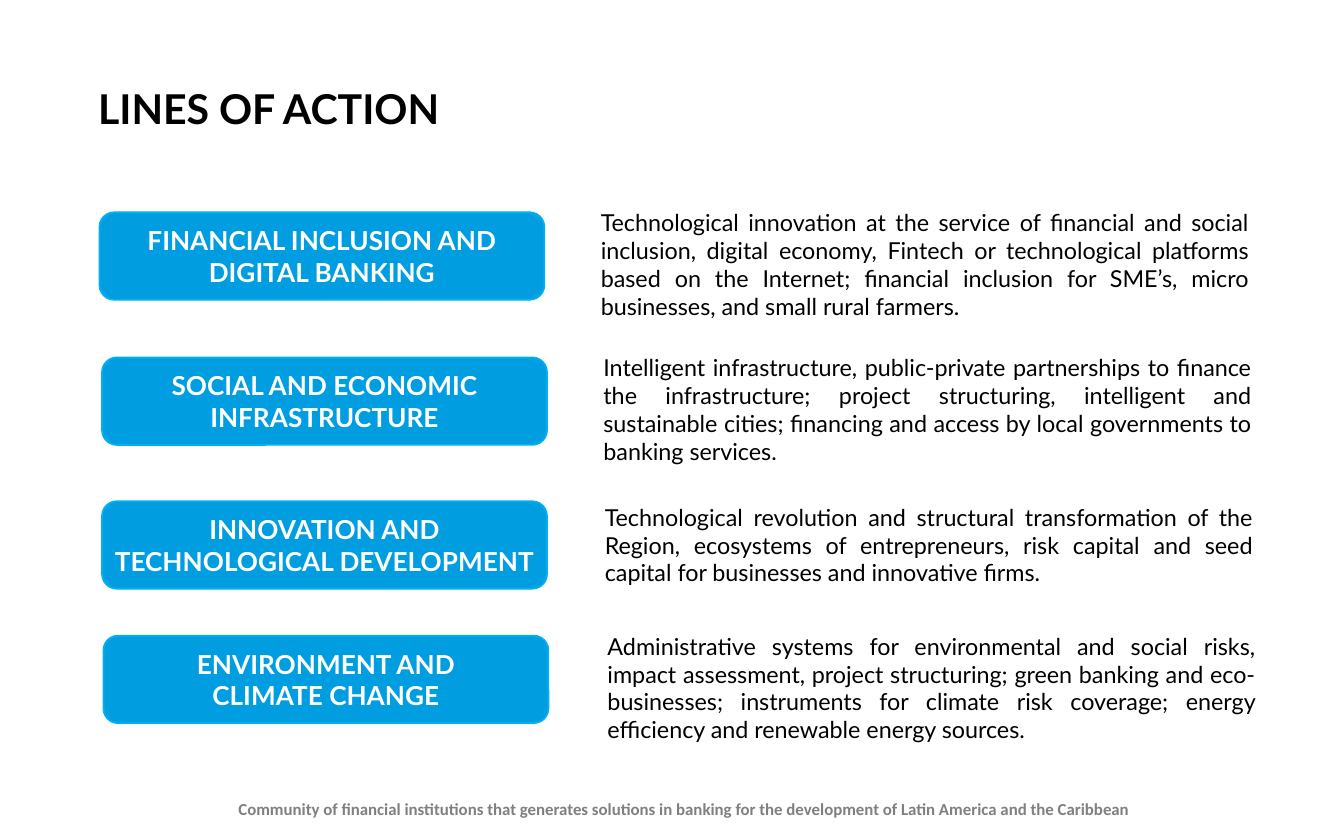
"""Build the "Lines of action" slide: four themed labels with their descriptions."""
from dataclasses import dataclass
from typing import Any, NamedTuple

from pptx import Presentation
from pptx.dml.color import RGBColor
from pptx.enum.shapes import MSO_SHAPE
from pptx.enum.text import MSO_ANCHOR, PP_ALIGN
from pptx.util import Inches, Pt

COLS, ROWS = 200, 125


@dataclass(frozen=True)
class Theme:
    """Colours, fonts and type sizes."""
    blue: RGBColor = RGBColor(0x00, 0x9D, 0xE0)
    edge: RGBColor = RGBColor(0x00, 0xB0, 0xF0)
    white: RGBColor = RGBColor(0xFF, 0xFF, 0xFF)
    black: RGBColor = RGBColor(0x00, 0x00, 0x00)
    grey: RGBColor = RGBColor(0x80, 0x80, 0x80)
    font: str = "Lato"
    footer_font: str = "Calibri"
    title: float = 22
    label: float = 14
    body: float = 12.5
    footer: float = 9


class Box(NamedTuple):
    """Place and size in grid columns and rows."""
    x: float
    y: float
    w: float
    h: float


class Line(NamedTuple):
    """One line of action: label, description and their places."""
    label: str
    label_box: Box
    text: str
    text_box: Box


T = Theme()
LABEL_SIZE = (66.2, 13)
TEXT_SIZE = (99.6, 18.4)
TITLE_BOX = Box(13, 12.4, 59.2, 8.8)
FOOTER_BOX = Box(27.6, 118, 148.2, 4.6)
FOOTER = ("Community of financial institutions that generates solutions in banking "
          "for the development of Latin America and the Caribbean")
FORMATS = {
    "title": {"name": T.font, "size": Pt(T.title), "bold": True, "color": T.black},
    "label": {"name": T.font, "size": Pt(T.label), "bold": True, "color": T.white},
    "body": {"name": T.font, "size": Pt(T.body), "bold": False, "color": T.black},
    "footer": {"name": T.footer_font, "size": Pt(T.footer), "bold": True, "color": T.grey},
}
LINES = [
    Line("FINANCIAL INCLUSION AND DIGITAL BANKING", Box(14.8, 31.6, *LABEL_SIZE),
         "Technological innovation at the service of financial and social inclusion, "
         "digital economy, Fintech or technological platforms based on the Internet; "
         "financial inclusion for SME’s, micro businesses, and small rural farmers.",
         Box(87.8, 30.2, *TEXT_SIZE)),
    Line("SOCIAL AND ECONOMIC INFRASTRUCTURE", Box(15.2, 53.2, *LABEL_SIZE),
         "Intelligent infrastructure, public-private partnerships to finance the "
         "infrastructure; project structuring, intelligent and sustainable cities; "
         "financing and access by local governments to banking services.",
         Box(88.2, 51.8, *TEXT_SIZE)),
    Line("INNOVATION AND\nTECHNOLOGICAL DEVELOPMENT", Box(15.2, 74.6, *LABEL_SIZE),
         "Technological revolution and structural transformation of the Region, "
         "ecosystems of entrepreneurs, risk capital and seed capital for businesses "
         "and innovative firms.",
         Box(88.4, 74, *TEXT_SIZE)),
    Line("ENVIRONMENT AND\nCLIMATE CHANGE", Box(15.4, 94.6, *LABEL_SIZE),
         "Administrative systems for environmental and social risks, impact assessment, "
         "project structuring; green banking and eco-businesses; instruments for climate "
         "risk coverage; energy efficiency and renewable energy sources.",
         Box(88.8, 93.2, *TEXT_SIZE)),
]


def place(prs: Any, box: Box) -> tuple[int, int, int, int]:
    """Turn grid units into lengths on the slide."""
    dx, dy = prs.slide_width / COLS, prs.slide_height / ROWS
    return round(box.x * dx), round(box.y * dy), round(box.w * dx), round(box.h * dy)


def write(sp: Any, text: str, style: str, align: PP_ALIGN,
          anchor: MSO_ANCHOR = MSO_ANCHOR.TOP, side: float = 0.08) -> None:
    """Fill a shape with formatted text."""
    tf = sp.text_frame
    frame = {"word_wrap": True, "vertical_anchor": anchor,
             "margin_left": Inches(side), "margin_right": Inches(side),
             "margin_top": Inches(0.04), "margin_bottom": Inches(0.04)}
    for name, value in frame.items():
        setattr(tf, name, value)
    tf.text = text
    for p in tf.paragraphs:
        p.alignment = align
        for r in p.runs:
            for name, value in FORMATS[style].items():
                if name == "color":
                    r.font.color.rgb = value
                else:
                    setattr(r.font, name, value)


def add_panel(prs: Any, s: Any, kind: MSO_SHAPE, box: Box, fill: RGBColor) -> Any:
    """Add a flat filled shape without an outline."""
    sp = s.shapes.add_shape(kind, *place(prs, box))
    sp.shadow.inherit = False
    sp.fill.solid()
    sp.fill.fore_color.rgb = fill
    sp.line.fill.background()
    return sp


def add_line_of_action(prs: Any, s: Any, line: Line) -> None:
    """Add a rounded label and the description beside it."""
    sp = add_panel(prs, s, MSO_SHAPE.ROUNDED_RECTANGLE, line.label_box, T.blue)
    sp.line.color.rgb = T.edge
    sp.line.width = Pt(1)
    write(sp, line.label, "label", PP_ALIGN.CENTER, MSO_ANCHOR.MIDDLE, 0.04)
    tb = s.shapes.add_textbox(*place(prs, line.text_box))
    write(tb, line.text, "body", PP_ALIGN.JUSTIFY)


def main() -> None:
    """Build and save the slide."""
    prs = Presentation()
    prs.slide_width, prs.slide_height = Inches(10), Inches(6.25)
    s = prs.slides.add_slide(prs.slide_layouts.get_by_name("Title Only"))
    title = s.shapes.title
    title.left, title.top, title.width, title.height = place(prs, TITLE_BOX)
    write(title, "LINES OF ACTION", "title", PP_ALIGN.LEFT)
    title.text_frame.paragraphs[0].line_spacing = 0.9
    for line in LINES:
        add_line_of_action(prs, s, line)
    footer = add_panel(prs, s, MSO_SHAPE.RECTANGLE, FOOTER_BOX, T.white)
    write(footer, FOOTER, "footer", PP_ALIGN.CENTER)
    prs.save("out.pptx")


if __name__ == "__main__":
    main()
